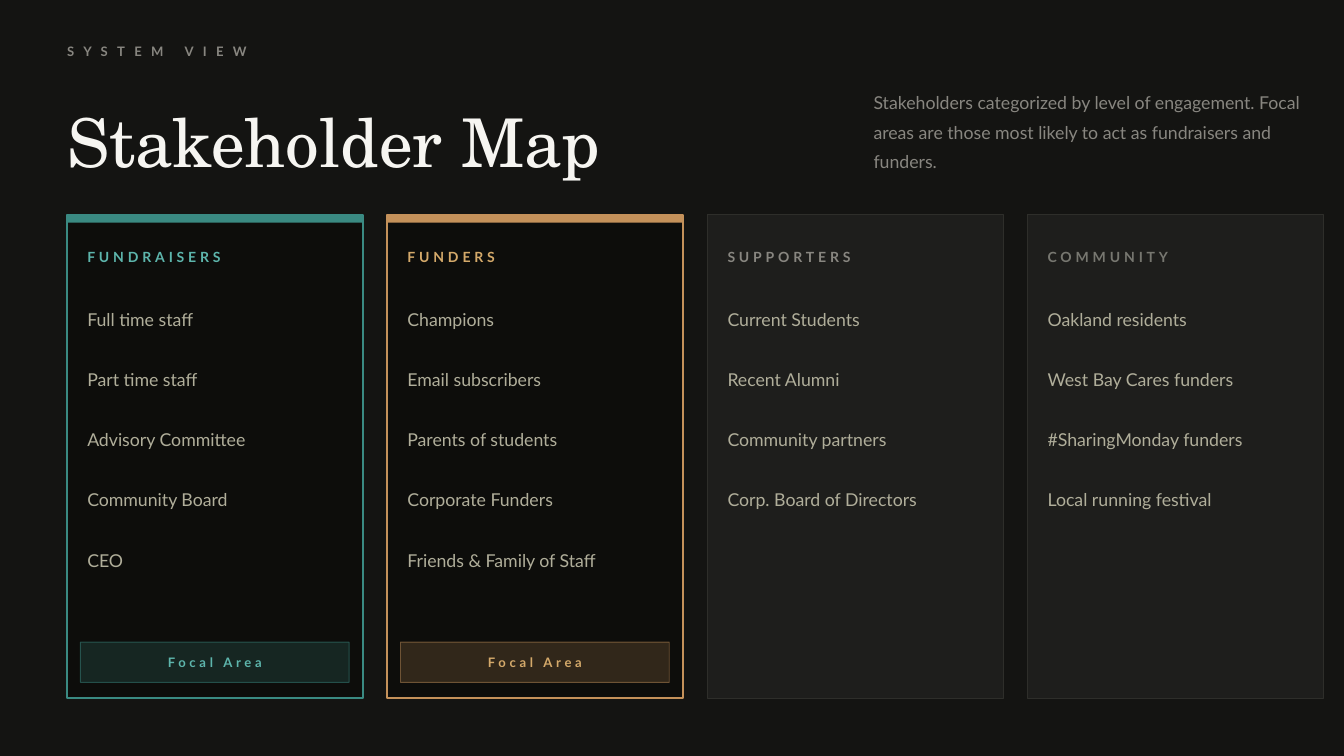
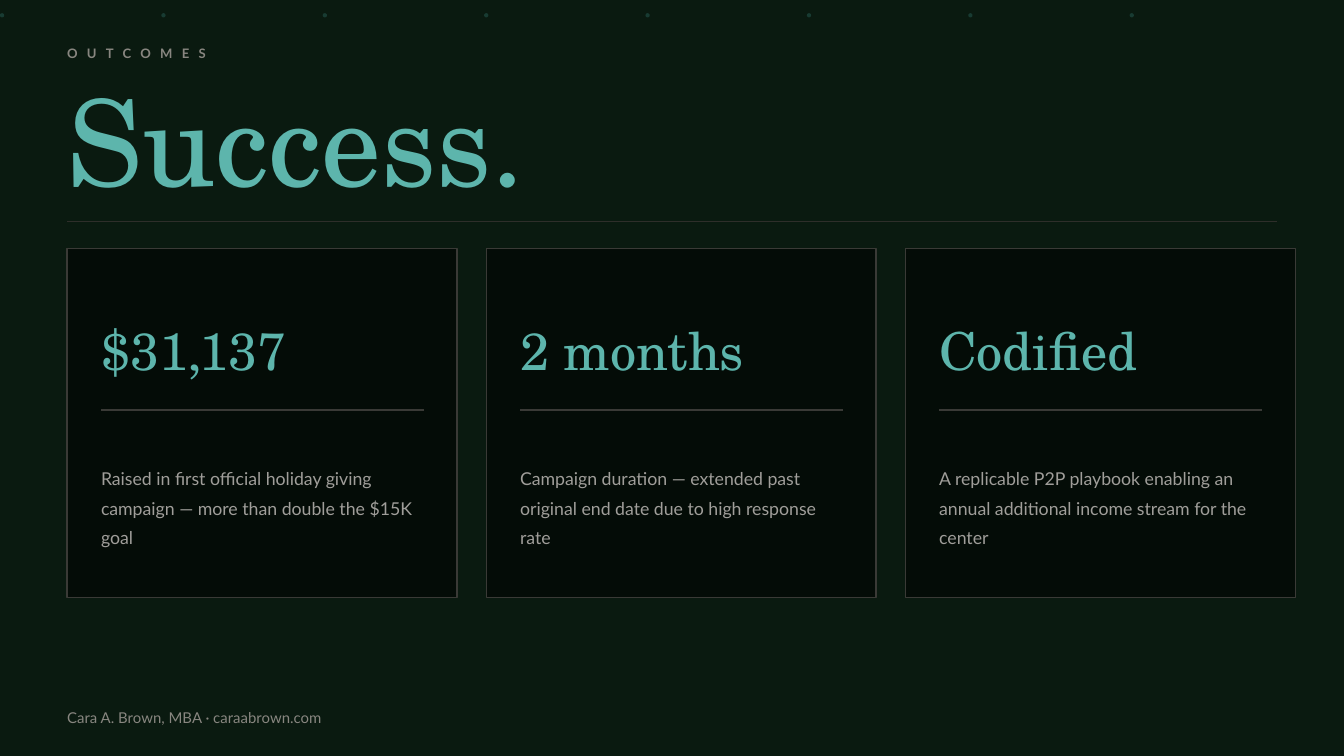
from lxml.etree import SubElement
from pptx import Presentation
from pptx.dml.color import RGBColor
from pptx.enum.shapes import MSO_CONNECTOR, MSO_SHAPE
from pptx.enum.text import MSO_ANCHOR, PP_ALIGN
from pptx.oxml.ns import qn
from pptx.util import Cm, Pt

# Shared look
SANS, SERIF = "Lato", "TeX Gyre Schola"
TEAL, MINT = "3A8A82", "5DB5AC"
GOLD, SAND = "C4915A", "D4A96A"
GREY, ASH = "888680", "777770"
INK, COAL, EDGE, RULE = "0D0D0B", "1E1E1C", "2E2E2A", "3A3A36"
LEFT = 1.27

# Stakeholder groups: heading, heading colour, accent (focal only), members
GROUPS = [
    ("FUNDRAISERS", MINT, TEAL,
     ["Full time staff", "Part time staff", "Advisory Committee",
      "Community Board", "CEO"]),
    ("FUNDERS", SAND, GOLD,
     ["Champions", "Email subscribers", "Parents of students",
      "Corporate Funders", "Friends & Family of Staff"]),
    ("SUPPORTERS", GREY, None,
     ["Current Students", "Recent Alumni", "Community partners",
      "Corp. Board of Directors"]),
    ("COMMUNITY", ASH, None,
     ["Oakland residents", "West Bay Cares funders",
      "#SharingMonday funders", "Local running festival"]),
]

# Results: figure, explanation
WINS = [
    ("$31,137", "Raised in first official holiday giving campaign — "
                "more than double the $15K goal"),
    ("2 months", "Campaign duration — extended past original end date "
                 "due to high response rate"),
    ("Codified", "A replicable P2P playbook enabling an annual additional "
                 "income stream for the center"),
]


def paint(item, color, alpha=100):
    """Give a fill or line format a solid colour, see-through if asked."""
    fill = getattr(item, "fill", item)
    fill.solid()
    fill.fore_color.rgb = RGBColor.from_string(color)
    if alpha < 100:
        tint = fill._xPr.find(qn("a:solidFill"))[0]
        SubElement(tint, qn("a:alpha"), val=str(alpha * 1000))


def shape(slide, box, fill, alpha=100, line=None, width=0.75, fade=100,
          kind=MSO_SHAPE.RECTANGLE):
    part = slide.shapes.add_shape(kind, *map(Cm, box))
    part.shadow.inherit = False
    paint(part.fill, fill, alpha)
    if line:
        part.line.width = Pt(width)
        paint(part.line, line, fade)
    else:
        part.line.fill.background()


def write(slide, box, text, size, color, face=SANS, bold=False, track=0,
          lead=None, align=None):
    frame = slide.shapes.add_textbox(*map(Cm, box)).text_frame
    frame.word_wrap = True
    frame.vertical_anchor = MSO_ANCHOR.MIDDLE
    frame.margin_left = frame.margin_right = 0
    frame.margin_top = frame.margin_bottom = 0
    frame.text = text
    para = frame.paragraphs[0]
    para.alignment = align
    para.line_spacing = lead
    for run in para.runs:
        font = run.font
        font.name, font.size, font.bold = face, Pt(size), bold
        paint(font, color)
        if track:
            run._r.get_or_add_rPr().set("spc", str(track * 100))


def rule(slide, left, top, width, color):
    line = slide.shapes.add_connector(
        MSO_CONNECTOR.STRAIGHT, Cm(left), Cm(top), Cm(left + width), Cm(top))
    line.line.width = Pt(0.75)
    paint(line.line, color)
    SubElement(line._element.spPr, qn("a:effectLst"))


def start(deck, color):
    slide = deck.slides.add_slide(deck.slide_layouts[6])
    paint(slide.background, color)
    return slide


def header(slide, box, tag, title, size, color, top):
    """Small spaced tag above a serif title; top is the tag's place."""
    write(slide, (box[0], top, box[2], 0.51), tag, 7, GREY,
          bold=True, track=5)
    write(slide, box, title, size, color, SERIF)


def group(slide, box, head, tone, accent, names):
    left, top, width, height = box
    # Panel, with a top band when focal
    if accent:
        shape(slide, box, INK, line=accent, width=1)
        shape(slide, (left, top, width, 0.15), accent)
        # Focal badge
        badge = (left + 0.25, top + height - 1.06, width - 0.51, 0.76)
        shape(slide, badge, accent, 20, accent, 0.5, 50)
        write(slide, badge, "Focal Area", 7, tone, bold=True, track=2,
              align=PP_ALIGN.CENTER)
    else:
        shape(slide, box, COAL, line=EDGE, width=0.5)
    # Heading and members
    left, width = left + 0.38, width - 0.76
    write(slide, (left, top + 0.41, width, 0.76), head, 7.5, tone,
          bold=True, track=2)
    for i, name in enumerate(names):
        write(slide, (left, top + 1.42 + i * 1.14, width, 1.02), name,
              9.5, "B0AE9A", lead=1.2)


def win(slide, box, figure, note):
    left, top, width, _ = box
    shape(slide, box, "000000", 50, RULE)
    left, width = left + 0.64, width - 1.27
    write(slide, (left, top + 0.76, width, 2.29), figure, 28, MINT, SERIF)
    rule(slide, left, top + 3.05, width, RULE)
    write(slide, (left, top + 3.43, width, 2.79), note, 9.5, "A09E9A",
          lead=1.4)


def map_slide(deck):
    slide = start(deck, "141412")
    header(slide, (LEFT, 1.14, 15.24, 3.05), "SYSTEM VIEW",
           "Stakeholder Map", 36, "F6F5F1", 0.71)
    write(slide, (16.51, 1.27, 8.13, 2.29),
          "Stakeholders categorized by level of engagement. Focal areas are "
          "those most likely to act as fundraisers and funders.",
          9.5, GREY, lead=1.4)
    for i, data in enumerate(GROUPS):
        group(slide, (LEFT + i * 6.05, 4.06, 5.59, 9.14), *data)


def win_slide(deck):
    slide = start(deck, "0A1A10")
    # Row of faint dots
    for i in range(8):
        shape(slide, (i * 3.05, 0.25, 0.08, 0.08), TEAL, 30,
              kind=MSO_SHAPE.OVAL)
    header(slide, (LEFT, 1.22, 15.24, 2.79), "OUTCOMES", "Success.", 64,
           MINT, 0.76)
    rule(slide, LEFT, 4.19, 22.86, EDGE)
    for i, data in enumerate(WINS):
        win(slide, (LEFT + i * 7.92, 4.7, 7.37, 6.6), *data)
    # Footer
    write(slide, (LEFT, 13.21, 22.86, 0.71),
          "Cara A. Brown, MBA · caraabrown.com", 8, GREY)


def main():
    deck = Presentation()
    deck.slide_width, deck.slide_height = Cm(25.4), Cm(14.29)
    map_slide(deck)
    win_slide(deck)
    deck.save("out.pptx")


if __name__ == "__main__":
    main()
